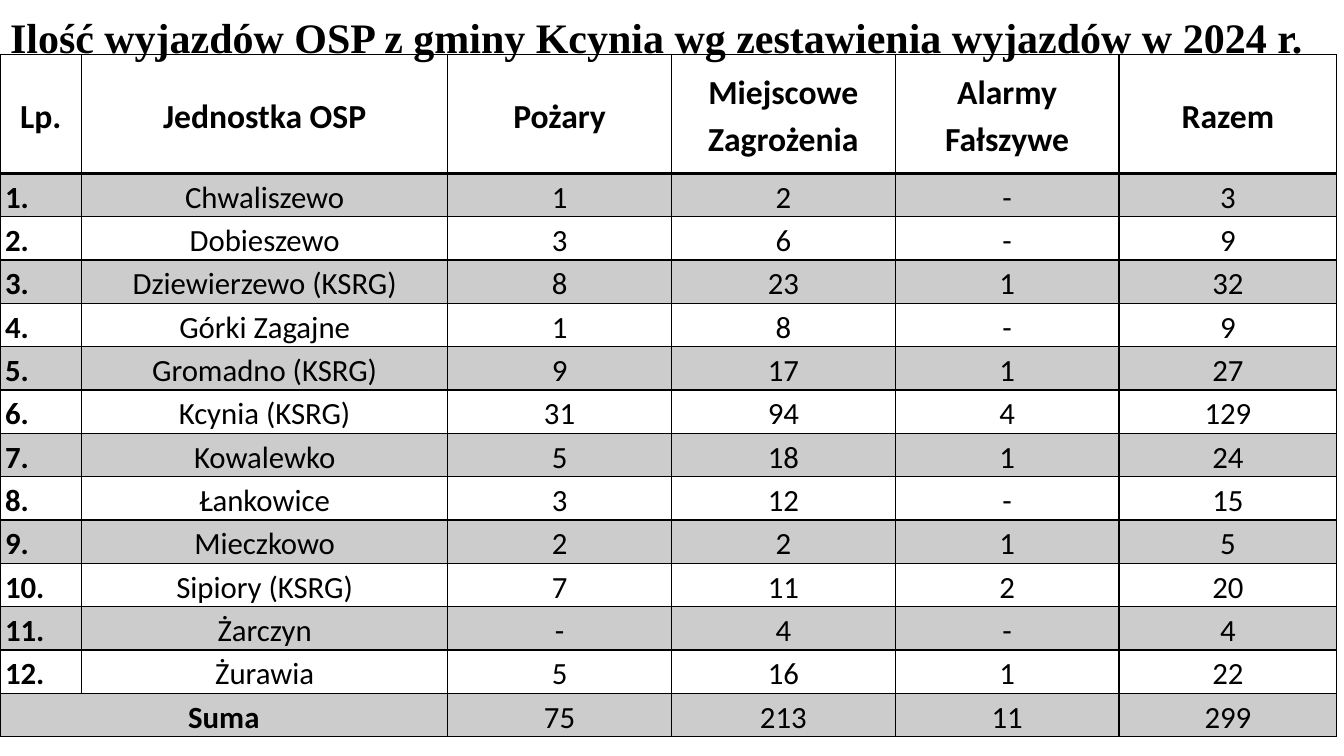
from lxml import etree
from pptx import Presentation
from pptx.dml.color import RGBColor
from pptx.enum.text import MSO_ANCHOR, PP_ALIGN
from pptx.oxml.ns import qn
from pptx.util import Inches, Pt

TITLE = "Ilość wyjazdów OSP z gminy Kcynia wg zestawienia wyjazdów w 2024 r."
HEADER = ("Lp.", "Jednostka OSP", "Pożary", "Miejscowe Zagrożenia", "Alarmy Fałszywe", "Razem")
UNITS = [
    ("Chwaliszewo", "1", "2", "-", "3"),
    ("Dobieszewo", "3", "6", "-", "9"),
    ("Dziewierzewo (KSRG)", "8", "23", "1", "32"),
    ("Górki Zagajne", "1", "8", "-", "9"),
    ("Gromadno (KSRG)", "9", "17", "1", "27"),
    ("Kcynia (KSRG)", "31", "94", "4", "129"),
    ("Kowalewko", "5", "18", "1", "24"),
    ("Łankowice", "3", "12", "-", "15"),
    ("Mieczkowo", "2", "2", "1", "5"),
    ("Sipiory (KSRG)", "7", "11", "2", "20"),
    ("Żarczyn", "-", "4", "-", "4"),
    ("Żurawia", "5", "16", "1", "22"),
]
TOTALS = ("Suma", "", "75", "213", "11", "299")

COLUMN_WIDTHS = (0.81, 3.63, 2.22, 2.22, 2.22, 2.16)
HEADER_HEIGHT = 1.18
ROW_HEIGHT = 0.43
SHADE_ALPHA = 20
BLACK = RGBColor(0, 0, 0)
LEFT, CENTER = PP_ALIGN.LEFT, PP_ALIGN.CENTER
TOP, MIDDLE = MSO_ANCHOR.TOP, MSO_ANCHOR.MIDDLE


def write_text(text_frame, text, size=22, font="Calibri", bold=False, align=CENTER, spacing=1.15):
    paragraph = text_frame.paragraphs[0]
    paragraph.alignment = align
    paragraph.line_spacing = spacing
    run = paragraph.add_run()
    run.text = text
    run.font.size = Pt(size)
    run.font.name = font
    run.font.bold = bold
    run.font.color.rgb = BLACK


def set_borders(cell, top=1, bottom=1):
    properties = cell._tc.get_or_add_tcPr()
    for side, width in (("L", 1), ("R", 1), ("T", top), ("B", bottom)):
        line = etree.SubElement(properties, qn(f"a:ln{side}"), w=str(Pt(width)))
        fill = etree.SubElement(line, qn("a:solidFill"))
        etree.SubElement(fill, qn("a:srgbClr"), val=str(BLACK))


def shade(cell):
    cell.fill.solid()
    cell.fill.fore_color.rgb = BLACK
    color = cell._tc.tcPr.find(qn("a:solidFill")).find(qn("a:srgbClr"))
    etree.SubElement(color, qn("a:alpha"), val=str(SHADE_ALPHA * 1000))


def add_title(slide):
    title = slide.shapes.title
    title.left, title.top = Inches(0), Inches(0)
    title.width, title.height = Inches(13.33), Inches(1.2)
    frame = title.text_frame
    frame.word_wrap = True
    frame.vertical_anchor = TOP
    frame.margin_top = Inches(0.17)
    write_text(frame, TITLE, size=30, font="Times New Roman", bold=True, align=LEFT, spacing=0.9)


def add_departures_table(slide):
    numbered = [(f"{number}.", *unit) for number, unit in enumerate(UNITS, 1)]
    rows = [HEADER, *numbered, TOTALS]
    last = len(rows) - 1
    height = HEADER_HEIGHT + ROW_HEIGHT * last
    frame = slide.shapes.add_table(
        len(rows), len(HEADER), Inches(0), Inches(0.54), Inches(sum(COLUMN_WIDTHS)), Inches(height)
    )
    table = frame.table
    table.first_row = False
    table.horz_banding = False
    for column, width in zip(table.columns, COLUMN_WIDTHS):
        column.width = Inches(width)
    for index, row in enumerate(table.rows):
        row.height = Inches(ROW_HEIGHT if index else HEADER_HEIGHT)
    table.cell(last, 0).merge(table.cell(last, 1))

    for row_index, values in enumerate(rows):
        is_header = row_index == 0
        for column_index, value in enumerate(values):
            cell = table.cell(row_index, column_index)
            cell.margin_left = cell.margin_right = Inches(0.05)
            cell.margin_top = cell.margin_bottom = 0
            cell.vertical_anchor = MIDDLE if is_header else TOP
            set_borders(cell, top=2 if row_index == 1 else 1, bottom=2 if is_header else 1)
            if row_index % 2:
                shade(cell)
            else:
                cell.fill.background()
            if cell.is_spanned:
                continue
            is_number = column_index == 0 and 0 < row_index < last
            write_text(
                cell.text_frame,
                value,
                size=24 if is_header else 22,
                bold=is_header or column_index == 0,
                align=LEFT if is_number else CENTER,
            )


def main():
    presentation = Presentation()
    presentation.slide_width = Inches(13.33)
    presentation.slide_height = Inches(7.5)
    slide = presentation.slides.add_slide(presentation.slide_layouts[5])
    add_title(slide)
    add_departures_table(slide)
    presentation.save("out.pptx")


if __name__ == "__main__":
    main()
